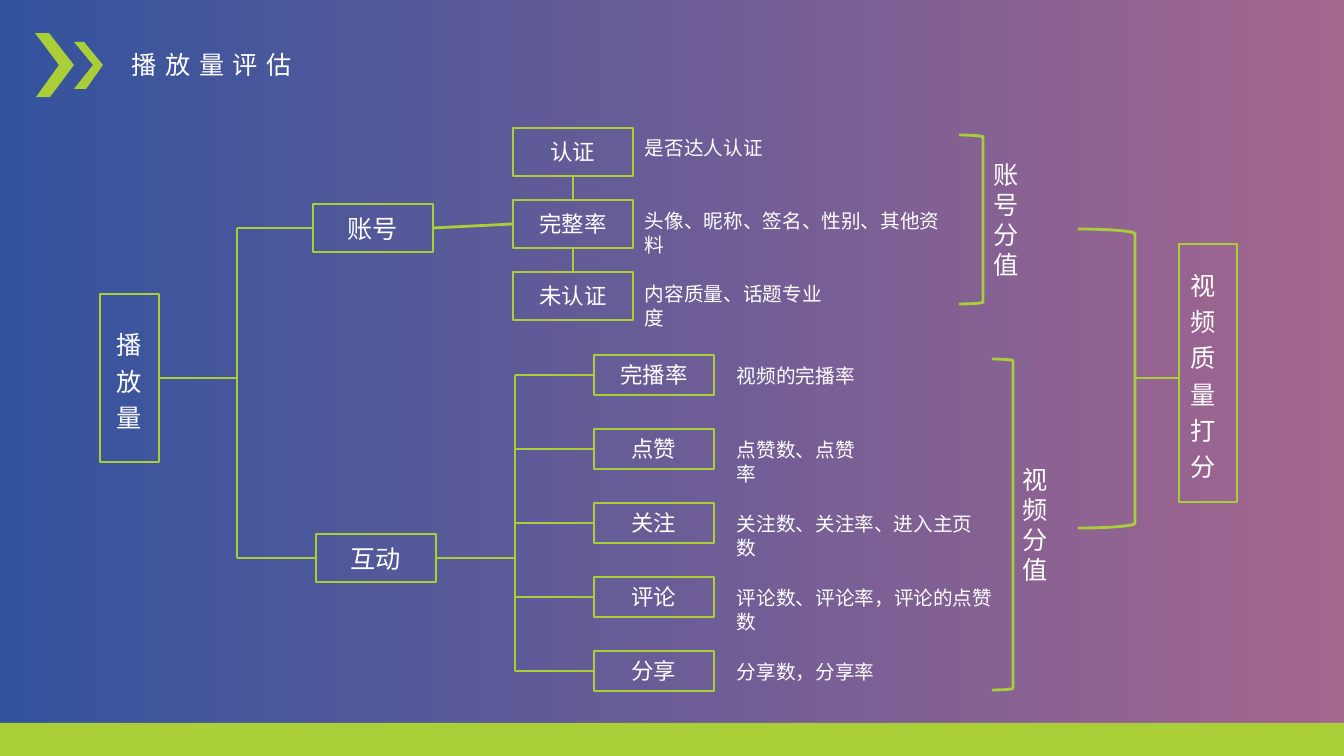
"""Build the slide that breaks play volume down into account and video scores."""
from dataclasses import dataclass

from lxml import etree
from pptx import Presentation
from pptx.dml.color import RGBColor
from pptx.enum.shapes import MSO_CONNECTOR, MSO_SHAPE
from pptx.enum.text import MSO_ANCHOR, PP_ALIGN
from pptx.oxml.ns import qn
from pptx.util import Pt

PX = 9072
RECTANGLE, BRACKET = MSO_SHAPE.RECTANGLE, MSO_SHAPE.RIGHT_BRACKET
STRAIGHT = MSO_CONNECTOR.STRAIGHT
TOP, MIDDLE = MSO_ANCHOR.TOP, MSO_ANCHOR.MIDDLE
LEFT, CENTER = PP_ALIGN.LEFT, PP_ALIGN.CENTER
SITE_TOP, SITE_LEFT, SITE_BOTTOM, SITE_RIGHT = range(4)


@dataclass(frozen=True)
class Theme:
    green: RGBColor = RGBColor.from_string("AACE38")
    white: RGBColor = RGBColor.from_string("FFFFFF")
    blue: RGBColor = RGBColor.from_string("33539E")
    mauve: RGBColor = RGBColor.from_string("A3668F")
    font: str = "Noto Sans CJK SC"
    title_font: str = "Arial"
    large: int = 18
    medium: int = 16
    small: int = 14
    line: int = 2


theme = Theme()


def write(shape, text, size=theme.large, font=theme.font, align=LEFT, anchor=TOP,
          inset=0, line_spacing=None, tracking=None):
    frame = shape.text_frame
    frame.word_wrap = True
    frame.vertical_anchor = anchor
    frame.margin_left = frame.margin_right = inset * PX
    frame.margin_top = frame.margin_bottom = 0
    frame.text = text
    for paragraph in frame.paragraphs:
        paragraph.alignment = align
        paragraph.line_spacing = line_spacing
        run = paragraph.runs[0]
        run.font.size = Pt(size)
        run.font.name = font
        run.font.color.rgb = theme.white
        properties = run.font._element
        etree.SubElement(properties, qn("a:ea")).set("typeface", font)
        if tracking:
            properties.set("spc", str(tracking * 100))


def connect(start, end, begin=None, finish=None):
    connector = slide.shapes.add_connector(STRAIGHT, *(PX * value for value in start + end))
    if begin:
        connector.begin_connect(*begin)
    if finish:
        connector.end_connect(*finish)
    connector.line.color.rgb = theme.green
    connector.line.width = Pt(theme.line)
    etree.SubElement(connector._element.spPr, qn("a:effectLst"))


presentation = Presentation()
presentation.slide_width, presentation.slide_height = 1344 * PX, 756 * PX
slide = presentation.slides.add_slide(presentation.slide_layouts[6])

background = slide.background.fill
background.gradient()
background.gradient_angle = 0
for stop, position, color in zip(background.gradient_stops, (0, 1), (theme.blue, theme.mauve)):
    stop.position = position
    stop.color.rgb = color

chevrons = [
    [(35, 33), (49, 33), (74, 65), (50, 97), (36, 97), (59, 65)],
    [(74, 42), (84, 42), (103, 65), (86, 89), (74, 89), (93, 65)],
]
solids = []
for points in chevrons:
    builder = slide.shapes.build_freeform(*points[0], scale=PX)
    builder.add_line_segments(points[1:], close=True)
    solids.append(builder.convert_to_shape())
solids.append(slide.shapes.add_shape(RECTANGLE, 0, 723 * PX, 1344 * PX, 33 * PX))
for shape in solids:
    shape.shadow.inherit = False
    shape.fill.solid()
    shape.fill.fore_color.rgb = theme.green
    shape.line.fill.background()

account_rows = [
    ("认证", "是否达人认证", 126),
    ("完整率", "头像、昵称、签名、性别、其他资料", 304),
    ("未认证", "内容质量、话题专业度", 186),
]
video_rows = [
    ("完播率", "视频的完播率", 126),
    ("点赞", "点赞数、点赞率", 127),
    ("关注", "关注数、关注率、进入主页数", 245),
    ("评论", "评论数、评论率，评论的点赞数", 264),
    ("分享", "分享数，分享率", 150),
]
heading = {"align": CENTER, "anchor": MIDDLE}
label = {**heading, "size": theme.medium}
outlines = [
    (RECTANGLE, (100, 294, 59, 168), "播\n放\n量", {**heading, "line_spacing": 1.2}),
    (RECTANGLE, (313, 204, 120, 48), "账号", heading),
    (RECTANGLE, (316, 534, 120, 48), "互动", heading),
    (RECTANGLE, (1179, 244, 58, 258), "视频质量打分",
     {"anchor": MIDDLE, "inset": 12, "line_spacing": 1.2}),
    (BRACKET, (959, 135, 24, 169), None, {}),
    (BRACKET, (992, 359, 21, 331), None, {}),
    (BRACKET, (1078, 229, 57, 299), None, {}),
]
texts = [
    ((132, 49, 180, 30), "播放量评估", {"font": theme.title_font, "tracking": 6}),
    ((994, 159, 28, 122), "账号分值", {}),
    ((1023, 464, 28, 122), "视频分值", {}),
]
detail = {"size": theme.small}
for row, (name, description, width) in enumerate(account_rows):
    outlines.append((RECTANGLE, (513, 128 + 72 * row, 120, 48), name, label))
    texts.append(((645, 136 + 73 * row, width, 24), description, detail))
for row, (name, description, width) in enumerate(video_rows):
    outlines.append((RECTANGLE, (594, 355 + 74 * row, 120, 40), name, label))
    texts.append(((737, 364 + 74 * row, width, 24), description, detail))

boxes = {}
for kind, bounds, text, style in outlines:
    shape = slide.shapes.add_shape(kind, *(PX * value for value in bounds))
    shape.shadow.inherit = False
    shape.fill.background()
    shape.line.color.rgb = theme.green
    shape.line.width = Pt(theme.line)
    if text:
        write(shape, text, **style)
        boxes[text.replace("\n", "")] = shape

for bounds, text, style in texts:
    write(slide.shapes.add_textbox(*(PX * value for value in bounds)), text, **style)

connect((159, 378), (237, 378), begin=(boxes["播放量"], SITE_RIGHT))
connect((237, 228), (237, 558))
connect((237, 228), (313, 228), finish=(boxes["账号"], SITE_LEFT))
connect((237, 558), (316, 558), finish=(boxes["互动"], SITE_LEFT))
connect((433, 228), (513, 224), (boxes["账号"], SITE_RIGHT), (boxes["完整率"], SITE_LEFT))
connect((573, 176), (573, 200), (boxes["认证"], SITE_BOTTOM), (boxes["完整率"], SITE_TOP))
connect((573, 248), (573, 272), (boxes["完整率"], SITE_BOTTOM), (boxes["未认证"], SITE_TOP))
connect((436, 558), (515, 558), begin=(boxes["互动"], SITE_RIGHT))
connect((515, 375), (515, 671))
for row, (name, _, _) in enumerate(video_rows):
    height = 375 + 74 * row
    connect((515, height), (594, height), finish=(boxes[name], SITE_LEFT))
connect((1135, 378), (1179, 378))

presentation.save("out.pptx")
